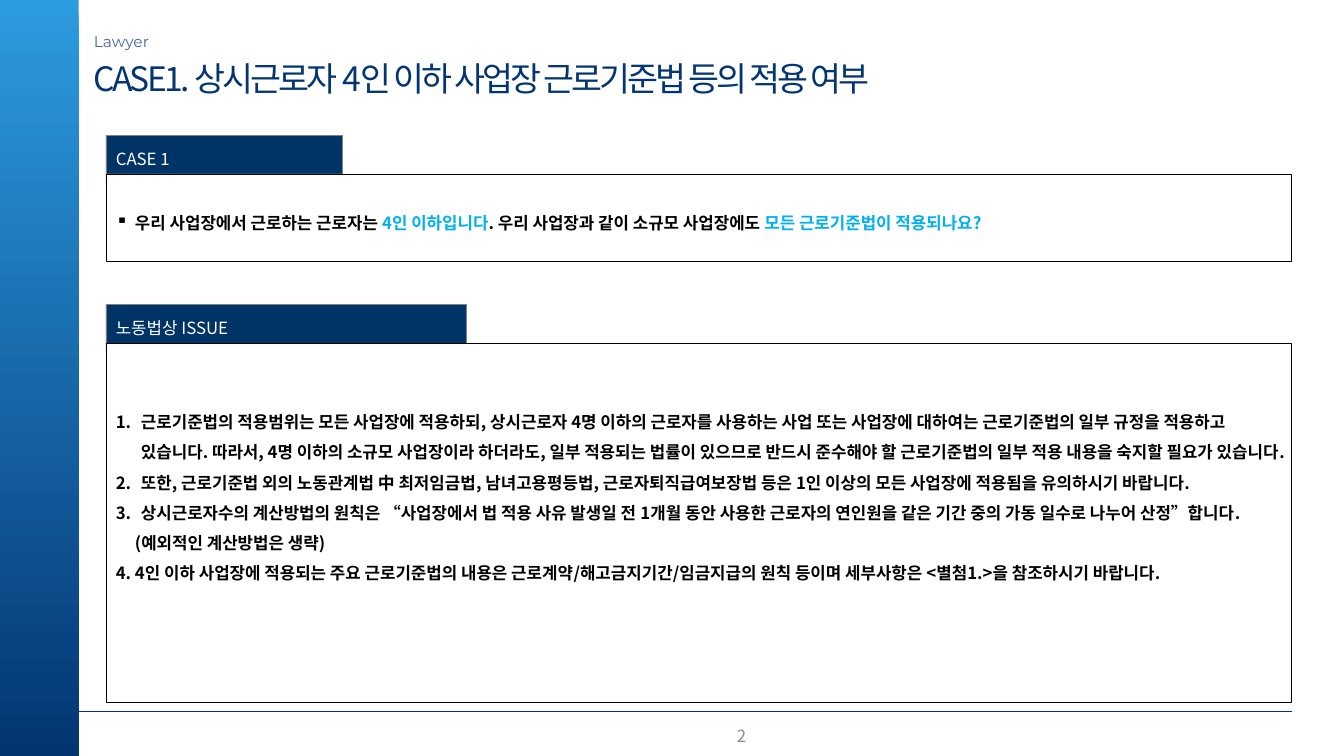
from lxml import etree
from pptx import Presentation
from pptx import util as u
from pptx.dml.color import RGBColor
from pptx.enum import shapes, text
from pptx.oxml import ns

rgb = RGBColor.from_string
KOREAN, LATIN = "Noto Sans CJK KR", "Montserrat"
NAVY, TAB_NAVY, SKY, BLACK, WHITE = "033572", "003366", "00B0F0", "000000", "FFFFFF"

deck = Presentation()
deck.slide_width, deck.slide_height = u.Inches(13.33), u.Inches(7.5)
page = deck.slides.add_slide(deck.slide_layouts[6])
COL, ROW = deck.slide_width / 100, deck.slide_height / 100
RAIL, TITLE_LEFT, LEFT, RIGHT = 5.85, 6.98, 7.88, 96.1
TAB_HEIGHT, BODY_DROP = 6.27, 5.13


def add_box(left, top, width, height, fill=None, line=None):
    """Add a filled rectangle, or a text box without fill; units are columns and rows."""
    place = [int(n) for n in (left * COL, top * ROW, width * COL, height * ROW)]
    if fill is None:
        box = page.shapes.add_textbox(*place)
    else:
        box = page.shapes.add_shape(shapes.MSO_SHAPE.RECTANGLE, *place)
        box.shadow.inherit = False
        box.fill.solid()
        box.fill.fore_color.rgb = rgb(fill)
        if line:
            box.line.color.rgb = rgb(line)
            box.line.width = u.Pt(0.5)
        else:
            box.line.fill.background()
    box.text_frame.word_wrap = True
    box.text_frame.vertical_anchor = text.MSO_ANCHOR.MIDDLE
    return box


def format_para(para, size, colour, font=KOREAN, bold=False, indent=0, hang=0, bullet=None):
    """Format a paragraph and its runs; indent and hang are in inches."""
    props = para._p.get_or_add_pPr()
    props.set("marL", str(u.Inches(indent)))
    props.set("indent", str(-u.Inches(hang)))
    if bullet == "1.":
        etree.SubElement(props, ns.qn("a:buAutoNum"), type="arabicPeriod")
    elif bullet:
        etree.SubElement(props, ns.qn("a:buChar"), char=bullet)
    para.alignment = text.PP_ALIGN.LEFT
    for span in para.runs:
        span.font.name = font
        span.font.size = u.Pt(size)
        span.font.bold = bold
        span.font.color.rgb = rgb(colour)
        latin = span._r.rPr.find(ns.qn("a:latin"))
        latin.addnext(etree.Element(ns.qn("a:ea"), typeface=font))


# Side rail, footer rule and page number
rail = add_box(0, 0, RAIL, 100, NAVY)
rail.fill.gradient()
rail.fill.gradient_angle = 270
for stop, position, colour in zip(rail.fill.gradient_stops, (0, 1), ("2D9BE0", NAVY)):
    stop.position = position
    stop.color.rgb = rgb(colour)

rule_y = int(94.13 * ROW)
rule = page.shapes.add_connector(
    shapes.MSO_CONNECTOR.STRAIGHT, int(RAIL * COL), rule_y, int(RIGHT * COL), rule_y)
rule.line.color.rgb = rgb(NAVY)
rule.line.width = u.Pt(0.75)
etree.SubElement(rule._element.spPr, ns.qn("a:effectLst"))

number = add_box(33.76, 94.67, 22.5, 5.33)
number.text_frame.text = "2"
format_para(number.text_frame.paragraphs[0], 12, "8C8C8C")
number.text_frame.paragraphs[0].alignment = text.PP_ALIGN.RIGHT

# Title and firm name
title = add_box(TITLE_LEFT, 7.6, 66.24, 5.33)
frame = title.text_frame
frame.margin_left = frame.margin_right = frame.margin_top = frame.margin_bottom = 0
frame.text = "CASE1. 상시근로자 4인 이하 사업장 근로기준법 등의 적용 여부"
format_para(frame.paragraphs[0], 24, NAVY)
frame.paragraphs[0].runs[0]._r.rPr.set("spc", "-200")

firm = add_box(TITLE_LEFT, 3.6, 5.03, 3.87)
firm.text_frame.margin_left = 0
firm.text_frame.word_wrap = False
firm.text_frame.vertical_anchor = text.MSO_ANCHOR.TOP
firm.text_frame.text = "Lawyer"
format_para(firm.text_frame.paragraphs[0], 11, "4963A7", LATIN)

# Two panels, each a tab with a body below it
bodies = []
for label, top, tab_width, body_height in (
        ("노동법상 ISSUE", 40.27, 26.86, 47.47),
        ("CASE 1", 17.87, 17.63, 11.6)):
    tab = add_box(LEFT, top, tab_width, TAB_HEIGHT, TAB_NAVY, "808080")
    tab.text_frame.text = label
    format_para(tab.text_frame.paragraphs[0], 12, WHITE, indent=0.1, hang=0.1)
    bodies.append(add_box(LEFT, top + BODY_DROP, RIGHT - LEFT, body_height, WHITE, BLACK))
issue, case = bodies

numbered = dict(indent=0.25, hang=0.25, bullet="1.")
issue_points = (
    ("근로기준법의 적용범위는 모든 사업장에 적용하되, 상시근로자 4명 이하의 근로자를 사용하는 "
     "사업 또는 사업장에 대하여는 근로기준법의 일부 규정을 적용하고 있습니다. 따라서, 4명 이하의 "
     "소규모 사업장이라 하더라도, 일부 적용되는 법률이 있으므로 반드시 준수해야 할 근로기준법의 "
     "일부 적용 내용을 숙지할 필요가 있습니다.", numbered),
    ("또한, 근로기준법 외의 노동관계법 中 최저임금법, 남녀고용평등법, 근로자퇴직급여보장법 등은 "
     "1인 이상의 모든 사업장에 적용됨을 유의하시기 바랍니다.", numbered),
    ("상시근로자수의 계산방법의 원칙은 “사업장에서 법 적용 사유 발생일 전 1개월 동안 사용한 "
     "근로자의 연인원을 같은 기간 중의 가동 일수로 나누어 산정”합니다.", numbered),
    ("(예외적인 계산방법은 생략)", dict(indent=0.19)),
    ("4. 4인 이하 사업장에 적용되는 주요 근로기준법의 내용은 근로계약/해고금지기간/임금지급의 "
     "원칙 등이며 세부사항은 <별첨1.>을 참조하시기 바랍니다.", {}),
)
issue.text_frame.margin_bottom = u.Inches(0.65)
issue.text_frame.text = "\n".join(point for point, _ in issue_points)
for para, (_, layout) in zip(issue.text_frame.paragraphs, issue_points):
    para.line_spacing = 1.5
    format_para(para, 12, BLACK, bold=True, **layout)

question = case.text_frame.paragraphs[0]
question.line_spacing = 1.5
for words in ("우리 사업장에서 근로하는 근로자는 ", "4인 이하입니다",
              ". 우리 사업장과 같이 소규모 사업장에도 ", "모든 근로기준법이 적용되나요?"):
    question.add_run().text = words
format_para(question, 12, BLACK, bold=True, indent=0.19, hang=0.19, bullet="▪")
for span in question.runs[1::2]:
    span.font.color.rgb = rgb(SKY)

deck.save("out.pptx")
